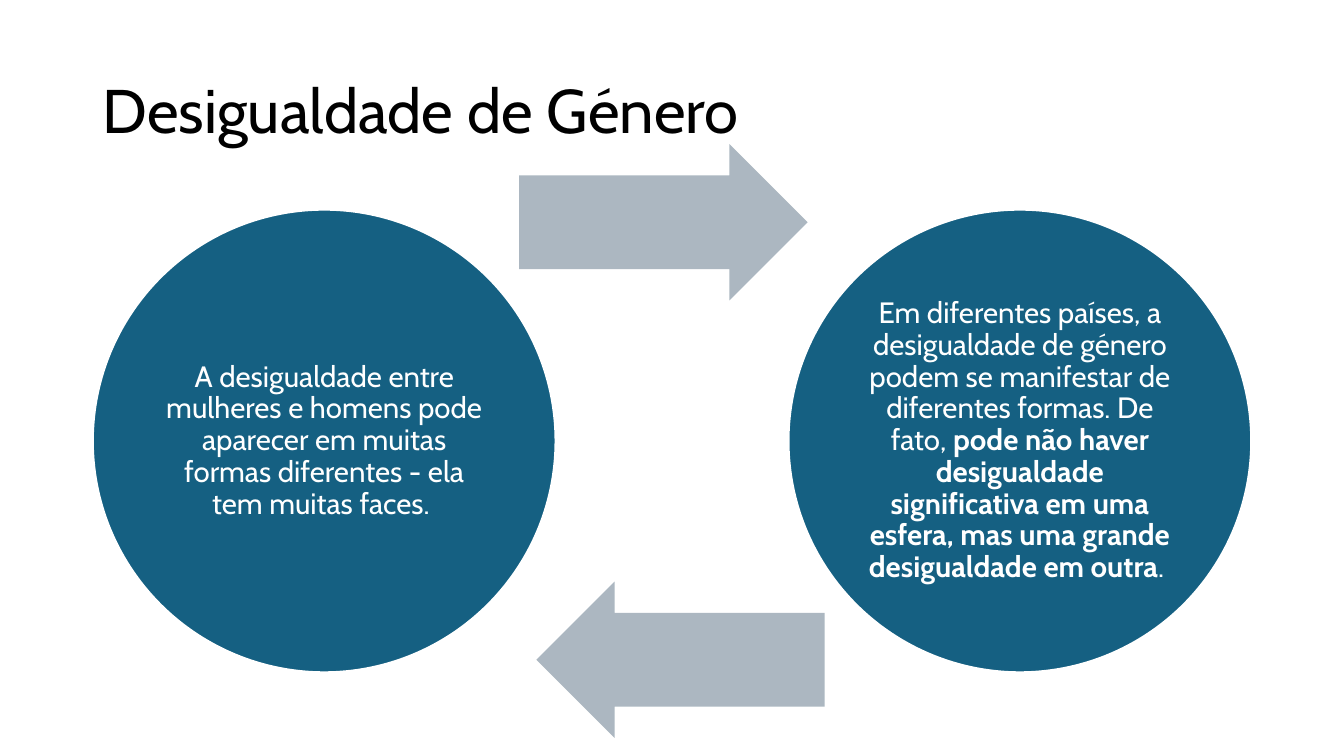
"""Build a slide on gender inequality: two circles joined by a cycle of arrows."""
from pptx import Presentation
from pptx.dml.color import RGBColor
from pptx.enum.shapes import MSO_SHAPE
from pptx.enum.text import MSO_ANCHOR, PP_ALIGN
from pptx.util import Inches, Pt

OVAL, ARROW = MSO_SHAPE.OVAL, MSO_SHAPE.RIGHT_ARROW
MIDDLE = MSO_ANCHOR.MIDDLE
LEFT, CENTER = PP_ALIGN.LEFT, PP_ALIGN.CENTER
BLACK = RGBColor(0x00, 0x00, 0x00)
WHITE = RGBColor(0xFF, 0xFF, 0xFF)
TEAL = RGBColor(0x15, 0x60, 0x82)
GREY = RGBColor(0xAC, 0xB7, 0xC1)
FONT = "Cabin"

TITLE = [("Desigualdade de Género", False)]
CIRCLES = [
    [("A desigualdade entre mulheres e homens pode aparecer em muitas "
      "formas diferentes - ela tem muitas faces. ", False)],
    [("Em diferentes países, a desigualdade de género podem se manifestar "
      "de diferentes formas. De fato, ", False),
     ("pode não haver desigualdade significativa em uma esfera, mas uma "
      "grande desigualdade em outra", True),
     (". ", False)],
]
ARROWS = [(5.15, 1.43, 0), (5.32, 5.77, 180)]

EDGE, TOP, SIZE, STEP = 0.92, 2.08, 4.59, 6.9
WIDE, HIGH = 2.86, 1.55
INSET = Inches(0.03)


def write(frame, runs, size, color, align):
    frame.word_wrap = True
    frame.vertical_anchor = MIDDLE
    para = frame.paragraphs[0]
    para.alignment = align
    para.line_spacing = 0.9
    for text, bold in runs:
        run = para.add_run()
        run.text = text
        font = run.font
        font.name, font.size, font.bold = FONT, Pt(size), bold
        font.color.rgb = color


def draw(slide, kind, box, fill):
    shape = slide.shapes.add_shape(kind, *map(Inches, box))
    shape.shadow.inherit = False
    shape.fill.solid()
    shape.fill.fore_color.rgb = fill
    return shape


def main():
    deck = Presentation()
    deck.slide_width, deck.slide_height = Inches(13.33), Inches(7.5)
    slide = deck.slides.add_slide(deck.slide_layouts[6])

    title = slide.shapes.add_textbox(*map(Inches, (EDGE, 0.4, 11.5, 1.45)))
    write(title.text_frame, TITLE, 44, BLACK, LEFT)

    for col, runs in enumerate(CIRCLES):
        disc = draw(slide, OVAL, (EDGE + col * STEP, TOP, SIZE, SIZE), TEAL)
        disc.line.color.rgb = WHITE
        disc.line.width = Pt(1.5)
        frame = disc.text_frame
        frame.margin_left = frame.margin_right = INSET
        frame.margin_top = frame.margin_bottom = INSET
        write(frame, runs, 21, WHITE, CENTER)

    for left, top, turn in ARROWS:
        arrow = draw(slide, ARROW, (left, top, WIDE, HIGH), GREY)
        arrow.line.fill.background()
        arrow.adjustments[0], arrow.adjustments[1] = 0.6, 0.5
        arrow.rotation = turn

    deck.save("out.pptx")


if __name__ == "__main__":
    main()
